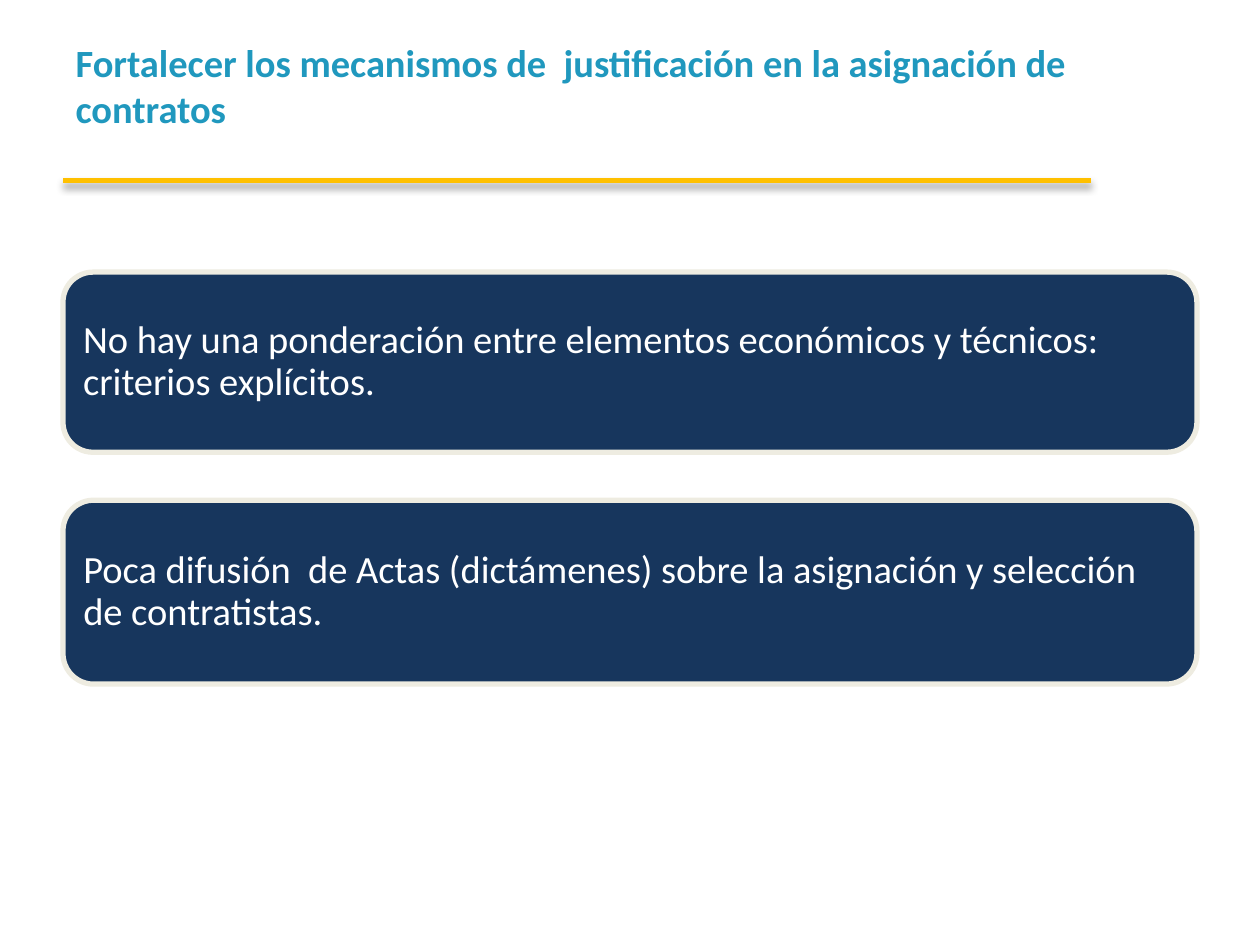
from lxml import etree
from pptx import Presentation
from pptx.dml.color import RGBColor
from pptx.enum.shapes import MSO_CONNECTOR, MSO_SHAPE
from pptx.enum.text import MSO_ANCHOR, PP_ALIGN
from pptx.oxml.ns import qn
from pptx.util import Inches, Pt

TEAL = RGBColor(0x20, 0x98, 0xBE)
NAVY = RGBColor(0x17, 0x36, 0x5D)
CREAM = RGBColor(0xEE, 0xEC, 0xE1)
GOLD = RGBColor(0xFF, 0xC0, 0x00)
WHITE = RGBColor(0xFF, 0xFF, 0xFF)

LEFT_ALIGN = PP_ALIGN.LEFT
TOP, MIDDLE = MSO_ANCHOR.TOP, MSO_ANCHOR.MIDDLE
STRAIGHT = MSO_CONNECTOR.STRAIGHT
ROUNDED = MSO_SHAPE.ROUNDED_RECTANGLE
TITLE_ONLY = 5

LEFT, WIDTH = 0.5, 9
CARDS_TOP, CARD_GAP = 2.16, 0.38
CARDS = [
    (1.43, "No hay una ponderación entre elementos económicos y técnicos: criterios explícitos."),
    (1.46, "Poca difusión  de Actas (dictámenes) sobre la asignación y selección de contratistas."),
]


class SlideBuilder:
    font_name = "Calibri"
    font_size = Pt(22)
    line_width = Pt(3)

    def __init__(self, slide):
        self.slide = slide

    def set_text(self, tf, text, color, bold=False):
        tf.text = text
        tf.word_wrap = True
        p = tf.paragraphs[0]
        p.alignment = LEFT_ALIGN
        for r in p.runs:
            r.font.name = self.font_name
            r.font.size = self.font_size
            r.font.bold = bold
            r.font.color.rgb = color
        return p

    def title(self, text, top, height):
        s = self.slide.shapes.title
        s.left, s.top = Inches(LEFT), Inches(top)
        s.width, s.height = Inches(WIDTH), Inches(height)
        tf = s.text_frame
        tf.vertical_anchor = TOP
        tf.margin_top = Inches(0.01)
        self.set_text(tf, text, TEAL, bold=True)

    def rule(self, y, right):
        """Draw a horizontal line with a soft shadow below it."""
        line = self.slide.shapes.add_connector(
            STRAIGHT, Inches(LEFT), Inches(y), Inches(right), Inches(y))
        line.line.color.rgb = GOLD
        line.line.width = self.line_width
        effects = etree.SubElement(line._element.spPr, qn("a:effectLst"))
        shadow = etree.SubElement(
            effects, qn("a:outerShdw"), blurRad=str(Pt(4)), dist=str(Pt(3)),
            dir="5400000", rotWithShape="0")
        black = etree.SubElement(shadow, qn("a:srgbClr"), val="000000")
        etree.SubElement(black, qn("a:alpha"), val="43000")

    def card(self, text, top, height):
        s = self.slide.shapes.add_shape(
            ROUNDED, Inches(LEFT), Inches(top), Inches(WIDTH), Inches(height))
        s.shadow.inherit = False
        s.fill.solid()
        s.fill.fore_color.rgb = NAVY
        s.line.color.rgb = CREAM
        s.line.width = self.line_width
        tf = s.text_frame
        tf.vertical_anchor = MIDDLE
        tf.margin_left = tf.margin_right = Inches(0.09)
        tf.margin_top = tf.margin_bottom = Inches(0.09)
        self.set_text(tf, text, WHITE).line_spacing = 0.9


def main():
    prs = Presentation()
    prs.slide_width, prs.slide_height = Inches(10), Inches(7.5)
    builder = SlideBuilder(prs.slides.add_slide(prs.slide_layouts[TITLE_ONLY]))
    builder.title("Fortalecer los mecanismos de  justificación en la asignación de contratos",
                  top=0.3, height=1.25)
    builder.rule(y=1.43, right=8.66)
    top = CARDS_TOP
    for height, text in CARDS:
        builder.card(text, top, height)
        top += height + CARD_GAP
    prs.save("out.pptx")


if __name__ == "__main__":
    main()
